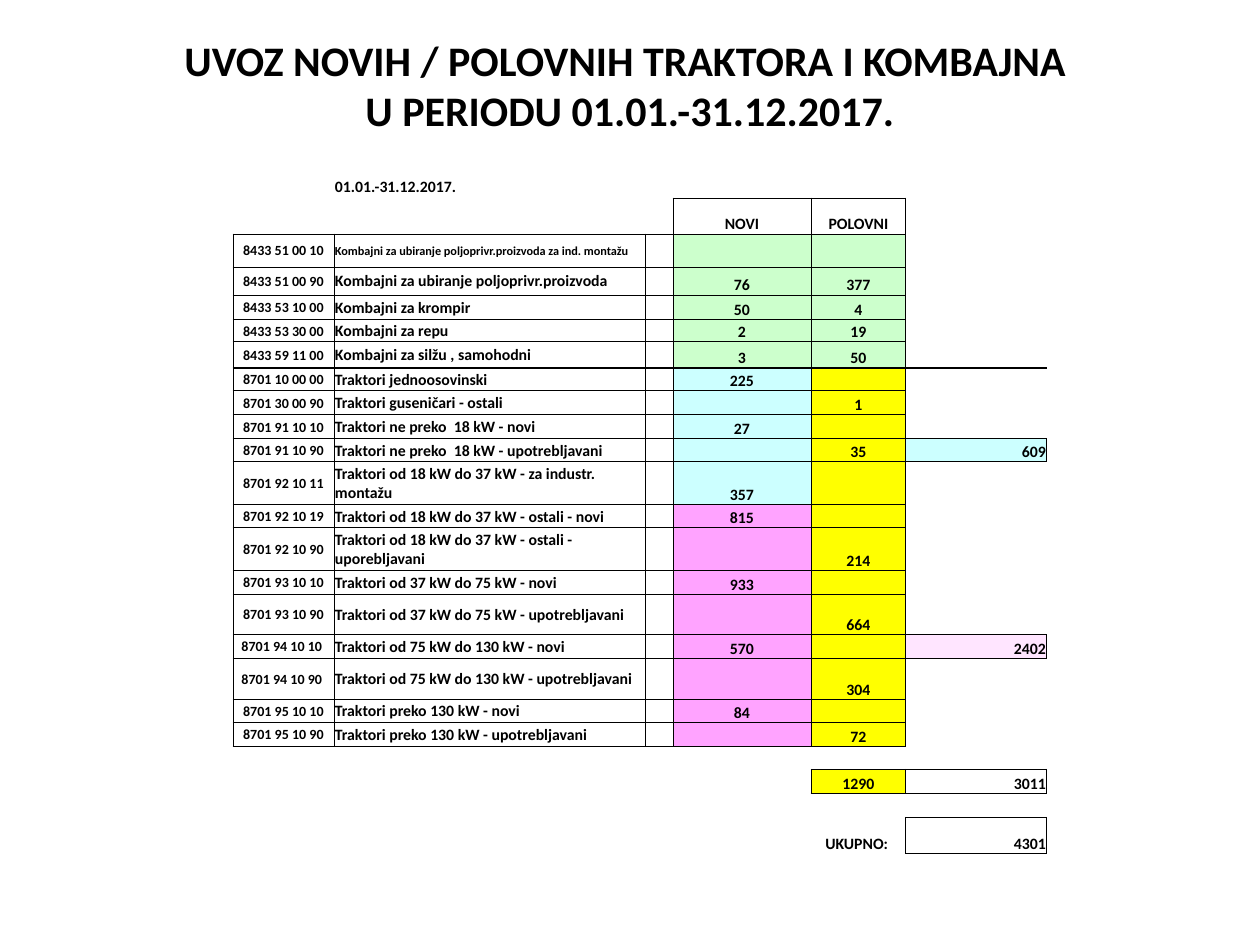
from lxml.etree import SubElement
from pptx import Presentation
from pptx.dml.color import RGBColor
from pptx.enum.text import MSO_ANCHOR, PP_ALIGN
from pptx.oxml import parse_xml
from pptx.oxml.ns import nsdecls, qn
from pptx.util import Pt

COLORS = {
    "ink": "000000", "white": "FFFFFF", "green": "CCFFCC", "cyan": "CCFFFF",
    "yellow": "FFFF00", "pink": "FFA3FF", "blush": "FFE5FF",
}
TITLE = "UVOZ NOVIH / POLOVNIH TRAKTORA I KOMBAJNA \nU PERIODU 01.01.-31.12.2017."
COLUMNS = [101, 311, 28, 138, 68, 27, 141]
ROW_HEIGHTS = [23, 36, 33, 28, 25, 22, 26, 23, 24, 24, 23, 43,
               23, 43, 24, 40, 24, 41, 23, 24, 23, 24, 24, 36]
GROUPS = [
    ("green", "green", [
        ("8433 51 00 10", "Kombajni za ubiranje poljoprivr.proizvoda za ind. montažu", "", ""),
        ("8433 51 00 90", "Kombajni za ubiranje poljoprivr.proizvoda", "76", "377"),
        ("8433 53 10 00", "Kombajni za krompir", "50", "4"),
        ("8433 53 30 00", "Kombajni za repu", "2", "19"),
        ("8433 59 11 00", "Kombajni za silžu , samohodni", "3", "50"),
    ]),
    ("cyan", "yellow", [
        ("8701 10 00 00", "Traktori jednoosovinski", "225", ""),
        ("8701 30 00 90", "Traktori guseničari - ostali", "", "1"),
        ("8701 91 10 10", "Traktori ne preko  18 kW - novi", "27", ""),
        ("8701 91 10 90", "Traktori ne preko  18 kW - upotrebljavani", "", "35"),
        ("8701 92 10 11", "Traktori od 18 kW do 37 kW - za industr. montažu", "357", ""),
    ]),
    ("pink", "yellow", [
        ("8701 92 10 19", "Traktori od 18 kW do 37 kW - ostali - novi", "815", ""),
        ("8701 92 10 90", "Traktori od 18 kW do 37 kW - ostali - uporebljavani", "", "214"),
        ("8701 93 10 10", "Traktori od 37 kW do 75 kW - novi", "933", ""),
        ("8701 93 10 90", "Traktori od 37 kW do 75 kW - upotrebljavani", "", "664"),
        ("8701 94 10 10 ", "Traktori od 75 kW do 130 kW - novi", "570", ""),
        ("8701 94 10 90 ", "Traktori od 75 kW do 130 kW - upotrebljavani", "", "304"),
        ("8701 95 10 10", "Traktori preko 130 kW - novi", "84", ""),
        ("8701 95 10 90", "Traktori preko 130 kW - upotrebljavani", "", "72"),
    ]),
]
FIRST_ITEM, LAST_ITEM = 2, 19
HEAVY_LINES = {7, 12}
UNMERGED_ROWS = {0, 20, 22}
CODE, NAME, NEW, USED, USED_END, TOTAL = 0, 1, 3, 4, 5, 6
LEFT, CENTER, RIGHT = PP_ALIGN.LEFT, PP_ALIGN.CENTER, PP_ALIGN.RIGHT


def px(value):
    return round(value * 914400 / 126)


def table_content():
    content = {
        (0, NAME): ("01.01.-31.12.2017.", "white", LEFT, 9),
        (1, NEW): ("NOVI", None, CENTER, 9),
        (1, USED): ("POLOVNI", None, CENTER, 9),
        (10, TOTAL): ("609", "cyan", RIGHT, 9),
        (16, TOTAL): ("2402", "blush", RIGHT, 9),
        (21, USED): ("1290", "yellow", CENTER, 9),
        (21, TOTAL): ("3011", "white", RIGHT, 9),
        (23, USED): ("UKUPNO: ", None, CENTER, 9),
        (23, TOTAL): ("4301", None, RIGHT, 9),
    }
    row = FIRST_ITEM
    for new_fill, used_fill, items in GROUPS:
        for code, name, new, used in items:
            content[row, CODE] = (code, "white", CENTER, 8)
            content[row, NAME] = (name, "white", LEFT, 7 if row == FIRST_ITEM else 9)
            content[row, NEW] = (new, new_fill, CENTER, 9)
            content[row, USED] = (used, used_fill, CENTER, 9)
            row += 1
    return content


def boxed_cells():
    items = {(row, column) for row in range(FIRST_ITEM, LAST_ITEM + 1)
             for column in range(TOTAL)}
    header = {(1, column) for column in (NEW, USED, USED_END)}
    sums = {(21, USED), (21, USED_END)} | {(row, TOTAL) for row in (10, 16, 21, 23)}
    return items | header | sums


class SlideBuilder:
    font = "Calibri"

    def __init__(self, deck):
        self.page = deck.slides.add_slide(deck.slide_layouts[6])

    def fill_text(self, frame, text, size, align):
        para = frame.paragraphs[0]
        para.text = text
        para.alignment = align
        style = {"name": self.font, "size": Pt(size), "bold": True}
        for span in para.runs:
            for key, value in style.items():
                setattr(span.font, key, value)
            span.font.color.rgb = RGBColor.from_string(COLORS["ink"])
        if not text:
            SubElement(para._p, qn("a:endParaRPr"), sz=str(size * 100))

    def text(self, left, top, width, height, text, size):
        box = self.page.shapes.add_textbox(px(left), px(top), px(width), px(height))
        frame = box.text_frame
        for key, value in {"word_wrap": True, "vertical_anchor": MSO_ANCHOR.MIDDLE}.items():
            setattr(frame, key, value)
        self.fill_text(frame, text, size, CENTER)

    def borders(self, cell, widths):
        properties = cell._tc.get_or_add_tcPr()
        for index, (side, width) in enumerate(zip("LRTB", widths)):
            paint = (f'<a:solidFill><a:srgbClr val="{COLORS["ink"]}"/></a:solidFill>'
                     if width else "<a:noFill/>")
            line = parse_xml(f'<a:ln{side} {nsdecls("a")} w="{Pt(width)}">{paint}</a:ln{side}>')
            properties.insert(index, line)

    def table(self, left, top, columns, heights, content, boxed):
        shape = self.page.shapes.add_table(
            len(heights), len(columns), px(left), px(top), px(sum(columns)), px(sum(heights)))
        table = shape.table
        for key in ("first_row", "horz_banding"):
            setattr(table, key, False)
        for column, width in zip(table.columns, columns):
            column.width = px(width)
        for row, height in zip(table.rows, heights):
            row.height = px(height)
        for row in range(len(heights)):
            for column in range(len(columns)):
                self.cell(table, row, column, content, boxed)
            if row not in UNMERGED_ROWS:
                table.cell(row, USED).merge(table.cell(row, USED_END))

    def cell(self, table, row, column, content, boxed):
        cell = table.cell(row, column)
        text, fill, align, size = content.get((row, column), ("", None, LEFT, 9))
        middle = column in (CODE, NAME)
        style = {
            "margin_left": px(1), "margin_right": px(1),
            "margin_top": px(1), "margin_bottom": 0,
            "vertical_anchor": MSO_ANCHOR.MIDDLE if middle else MSO_ANCHOR.BOTTOM,
        }
        for key, value in style.items():
            setattr(cell, key, value)
        self.fill_text(cell.text_frame, text, size, align)
        if fill:
            cell.fill.solid()
            cell.fill.fore_color.rgb = RGBColor.from_string(COLORS[fill])
        else:
            cell.fill.background()

        def edge(neighbour, line=None):
            if line in HEAVY_LINES and (column < TOTAL or line == 7):
                return 1
            return 0.5 if {(row, column), neighbour} & boxed else 0

        self.borders(cell, [
            edge((row, column - 1)), edge((row, column + 1)),
            edge((row - 1, column), row), edge((row + 1, column), row + 1)])


def main():
    deck = Presentation()
    deck.slide_width, deck.slide_height = px(1260), px(945)
    builder = SlideBuilder(deck)
    builder.text(63, 16, 1134, 137, TITLE, 24)
    builder.table(233, 175, COLUMNS, ROW_HEIGHTS, table_content(), boxed_cells())
    deck.save("out.pptx")


if __name__ == "__main__":
    main()
